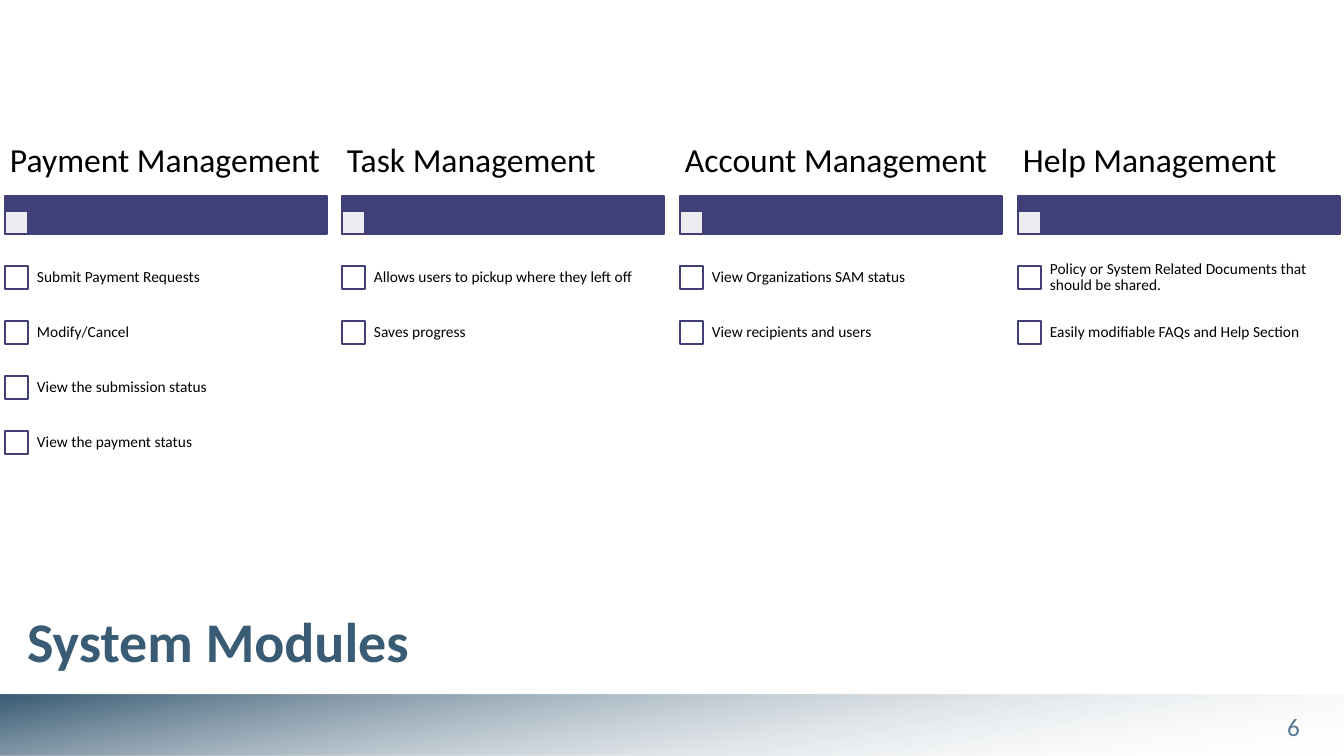
from dataclasses import dataclass

from lxml.etree import SubElement
from pptx import Presentation
from pptx.dml.color import RGBColor
from pptx.enum.shapes import MSO_SHAPE
from pptx.enum.text import MSO_ANCHOR, MSO_AUTO_SIZE, PP_ALIGN
from pptx.oxml.ns import qn
from pptx.util import Emu, Pt

SLIDE_WIDTH = 1344
SLIDE_HEIGHT = 756
EMU_PER_PX = 12192000 / SLIDE_WIDTH


@dataclass(frozen=True)
class Theme:
    font: str = "Calibri"
    title: str = "395B74"
    accent: str = "413F77"
    number: str = "577795"
    text: str = "000000"
    white: str = "FFFFFF"
    title_size: int = 40
    heading_size: int = 24
    number_size: int = 18
    item_size: int = 11


THEME = Theme()

MODULES = [
    ("Payment Management", [
        "Submit Payment Requests",
        "Modify/Cancel",
        "View the submission status",
        "View the payment status",
    ]),
    ("Task Management", [
        "Allows users to pickup where they left off",
        "Saves progress",
    ]),
    ("Account Management", [
        "View Organizations SAM status",
        "View recipients and users",
    ]),
    ("Help Management", [
        "Policy or System Related Documents that should be shared.",
        "Easily modifiable FAQs and Help Section",
    ]),
]


def px(length):
    return Emu(round(length * EMU_PER_PX))


def place(*lengths):
    return [px(length) for length in lengths]


def write(shape, text, size, color, align=PP_ALIGN.LEFT, bold=False):
    frame = shape.text_frame
    frame.word_wrap = True
    frame.auto_size = MSO_AUTO_SIZE.NONE
    frame.vertical_anchor = MSO_ANCHOR.MIDDLE
    para = frame.paragraphs[0]
    para.text = text
    para.alignment = align
    para.font.name = THEME.font
    para.font.size = Pt(size)
    para.font.bold = bold
    para.font.color.rgb = RGBColor.from_string(color)
    return para


def add_text(page, area, insets, text, size, color, align=PP_ALIGN.LEFT):
    box = page.shapes.add_textbox(*place(*area))
    frame = box.text_frame
    frame.margin_left = frame.margin_right = px(insets[0])
    frame.margin_top = frame.margin_bottom = px(insets[1])
    return write(box, text, size, color, align)


def add_box(page, area, fill, alpha=100):
    box = page.shapes.add_shape(MSO_SHAPE.RECTANGLE, *place(*area))
    box.shadow.inherit = False
    box.fill.solid()
    box.fill.fore_color.rgb = RGBColor.from_string(fill)
    box.line.color.rgb = RGBColor.from_string(THEME.accent)
    box.line.width = Pt(2)
    if alpha < 100:
        color = box.fill._xPr.find(qn("a:solidFill"))[0]
        SubElement(color, qn("a:alpha"), val=str(alpha * 1000))


def add_footer(page):
    band = page.shapes.add_shape(
        MSO_SHAPE.RECTANGLE, *place(0, 695, SLIDE_WIDTH, 61))
    band.shadow.inherit = False
    band.line.fill.background()
    band.fill.gradient()
    gradient = band.fill._xPr.find(qn("a:gradFill"))
    for child in list(gradient):
        gradient.remove(child)
    stops = SubElement(gradient, qn("a:gsLst"))
    for position, color, alpha in [(0, THEME.title, 100), (99, THEME.white, 0)]:
        stop = SubElement(stops, qn("a:gs"), pos=str(position * 1000))
        shade = SubElement(stop, qn("a:srgbClr"), val=color)
        SubElement(shade, qn("a:alpha"), val=str(alpha * 1000))
    SubElement(gradient, qn("a:lin"), ang=str(80 * 60000), scaled="0")
    add_text(page, (1243, 707, 101, 38), (7, 4), "6",
             THEME.number_size, THEME.number, PP_ALIGN.CENTER)


def add_title(page, text):
    title = page.shapes.title
    title.left, title.top, title.width, title.height = place(17, 590, 1058, 101)
    write(title, text, THEME.title_size, THEME.title, bold=True)


def add_module(page, left, heading, items):
    add_box(page, (left, 196, 322, 38), THEME.accent)
    add_box(page, (left, 211, 23, 23), THEME.white, alpha=90)
    para = add_text(page, (left, 128, 322, 68), (5, 3), heading,
                    THEME.heading_size, THEME.text)
    para.line_spacing = 0.9
    for row, item in enumerate(items):
        top = 250 + row * 55
        add_box(page, (left, top + 16, 23, 23), THEME.white)
        para = add_text(page, (left + 23, top, 299, 55), (9, 9), item,
                        THEME.item_size, THEME.text)
        para.line_spacing = 0.9


def main():
    deck = Presentation()
    deck.slide_width, deck.slide_height = place(SLIDE_WIDTH, SLIDE_HEIGHT)
    page = deck.slides.add_slide(deck.slide_layouts.get_by_name("Title Only"))
    add_footer(page)
    add_title(page, "System Modules")
    for column, (heading, items) in enumerate(MODULES):
        add_module(page, 5 + column * 1013 // 3, heading, items)
    deck.save("out.pptx")


if __name__ == "__main__":
    main()
